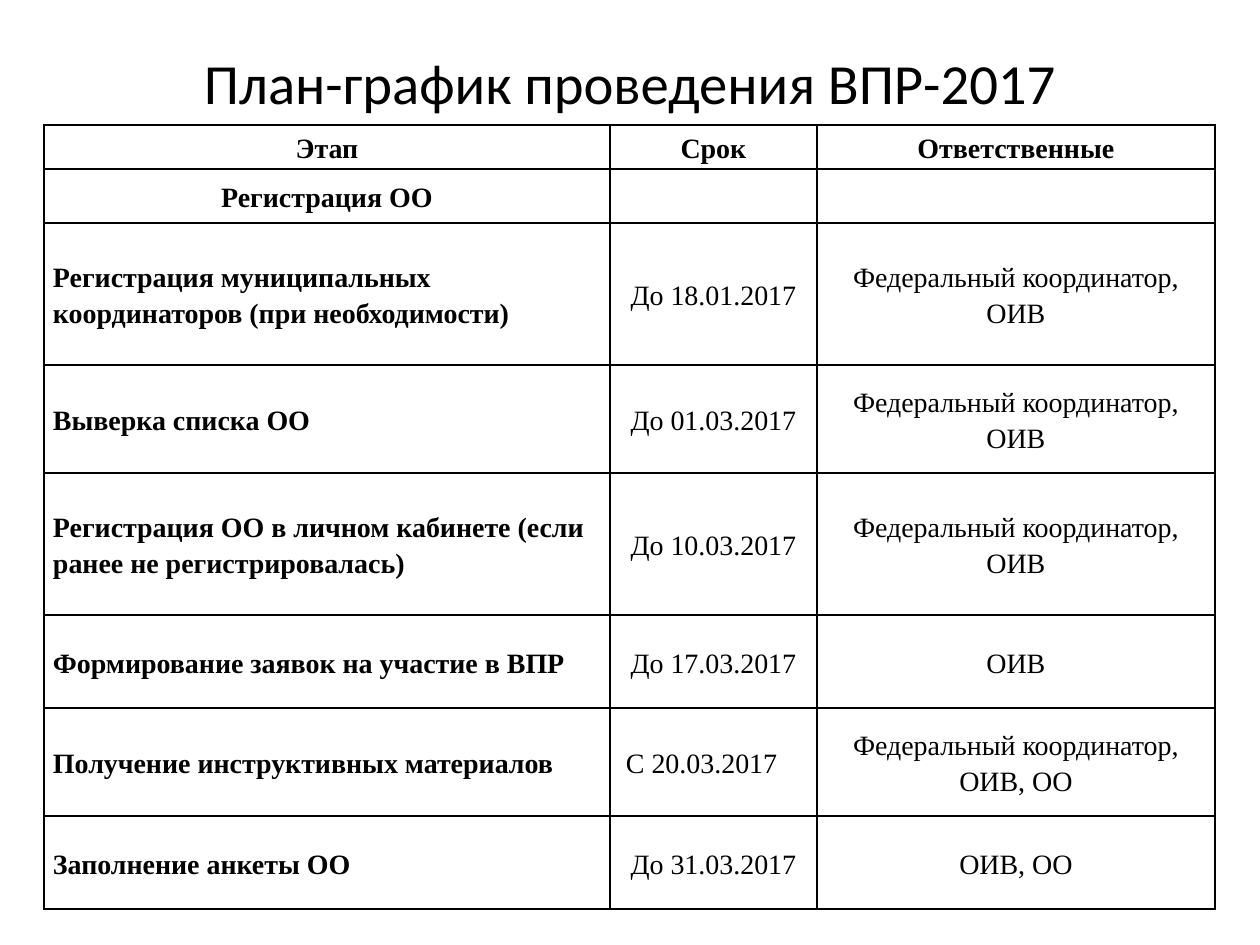
from lxml import etree
from pptx import Presentation
from pptx import util as u
from pptx.dml.color import RGBColor
from pptx.enum import text
from pptx.oxml import ns

PX = 914400 // 126
BLACK = RGBColor(0x00, 0x00, 0x00)
WHITE = RGBColor(0xFF, 0xFF, 0xFF)
CENTER, LEFT = text.PP_ALIGN.CENTER, text.PP_ALIGN.LEFT

COLUMN_WIDTHS = [566, 207, 398]
ROW_HEIGHTS = [44, 54, 142, 108, 142, 93, 108, 93]
COORDINATOR = "Федеральный координатор, ОИВ"
SCHEDULE = [
    ("Этап", "Срок", "Ответственные"),
    ("Регистрация ОО", "", ""),
    ("Регистрация муниципальных координаторов (при необходимости)",
     "До 18.01.2017", COORDINATOR),
    ("Выверка списка ОО", "До 01.03.2017", COORDINATOR),
    ("Регистрация ОО в личном кабинете (если ранее не регистрировалась)",
     "До 10.03.2017", COORDINATOR),
    ("Формирование заявок на участие в ВПР", "До 17.03.2017", "ОИВ"),
    ("Получение инструктивных материалов", " С 20.03.2017",
     COORDINATOR + ", ОО"),
    ("Заполнение анкеты ОО", "До 31.03.2017", "ОИВ, ОО"),
]
HEADING_ROWS = 2
LEFT_DATE_ROW = 6


def px(length):
    return u.Emu(length * PX)


def set_font(para, name, size, bold=False):
    font = para.font
    font.name, font.size, font.bold = name, u.Pt(size), bold
    font.color.rgb = BLACK


def add_title(page, words):
    box = page.shapes.add_textbox(px(63), px(38), px(1134), px(87))
    frame = box.text_frame
    frame.word_wrap = True
    frame.vertical_anchor = text.MSO_ANCHOR.MIDDLE
    para = frame.paragraphs[0]
    para.text = words
    para.alignment = CENTER
    set_font(para, "Calibri", 32.4)


def add_borders(cell):
    # Border lines come before the fill in the cell properties
    properties = cell._tc.get_or_add_tcPr()
    for index, side in enumerate(("lnL", "lnR", "lnT", "lnB")):
        line = etree.Element(ns.qn(f"a:{side}"), w=str(u.Pt(1)))
        fill = etree.SubElement(line, ns.qn("a:solidFill"))
        etree.SubElement(fill, ns.qn("a:srgbClr"), val=str(BLACK))
        properties.insert(index, line)


def fill_cell(cell, words, alignment, bold):
    cell.margin_left = cell.margin_right = px(9)
    cell.margin_top = cell.margin_bottom = 0
    cell.vertical_anchor = text.MSO_ANCHOR.MIDDLE
    cell.fill.solid()
    cell.fill.fore_color.rgb = WHITE
    add_borders(cell)
    para = cell.text_frame.paragraphs[0]
    para.text = words
    para.alignment = alignment
    para.line_spacing = 1.15
    set_font(para, "Times New Roman", 16, bold)


def add_schedule(page):
    table = page.shapes.add_table(
        len(SCHEDULE), len(COLUMN_WIDTHS), px(44), px(125),
        px(sum(COLUMN_WIDTHS)), px(sum(ROW_HEIGHTS))).table
    for column, width in zip(table.columns, COLUMN_WIDTHS):
        column.width = px(width)
    for row, height in zip(table.rows, ROW_HEIGHTS):
        row.height = px(height)
    for r, entries in enumerate(SCHEDULE):
        heading = r < HEADING_ROWS
        for c, words in enumerate(entries):
            stage = c == 0 and not heading
            left = stage or (r, c) == (LEFT_DATE_ROW, 1)
            fill_cell(table.cell(r, c), words, LEFT if left else CENTER,
                      heading or stage)


def main():
    deck = Presentation()
    deck.slide_width, deck.slide_height = px(1260), px(945)
    page = deck.slides.add_slide(deck.slide_layouts[6])
    add_title(page, "План-график проведения ВПР-2017")
    add_schedule(page)
    deck.save("out.pptx")


if __name__ == "__main__":
    main()
